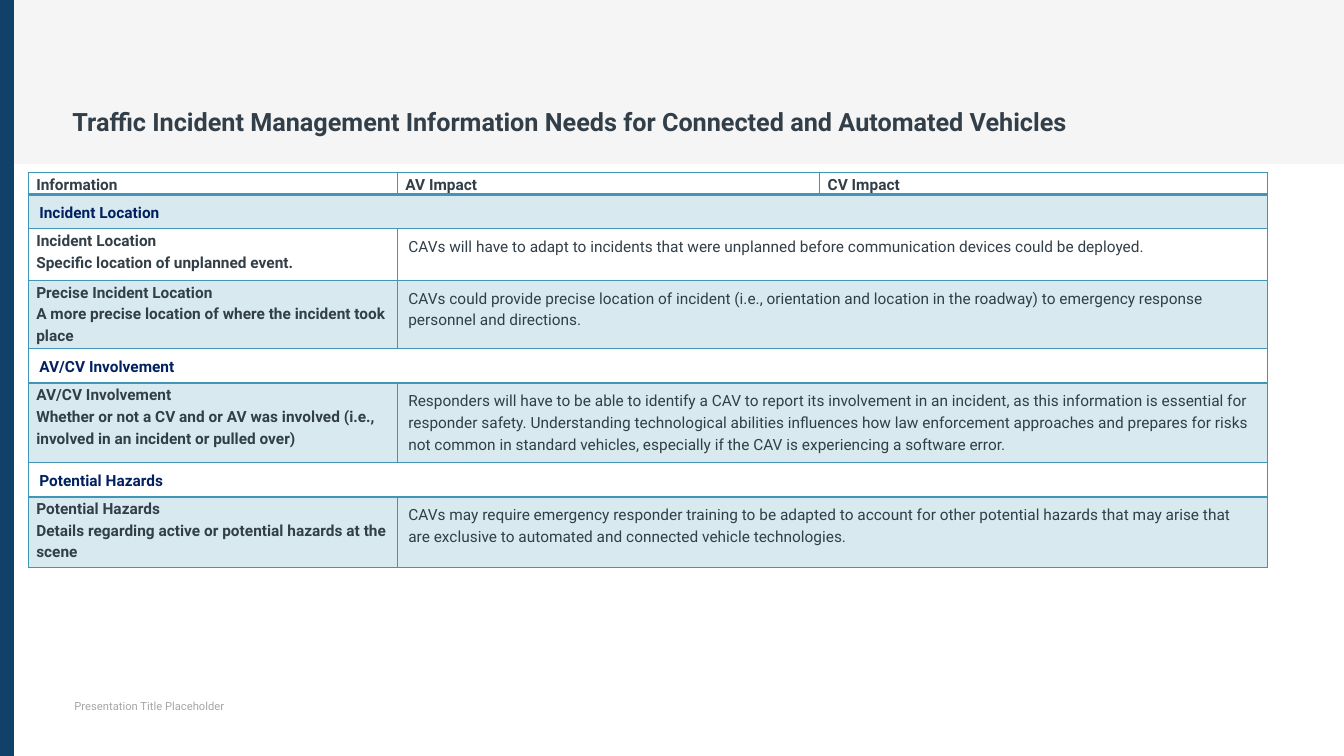
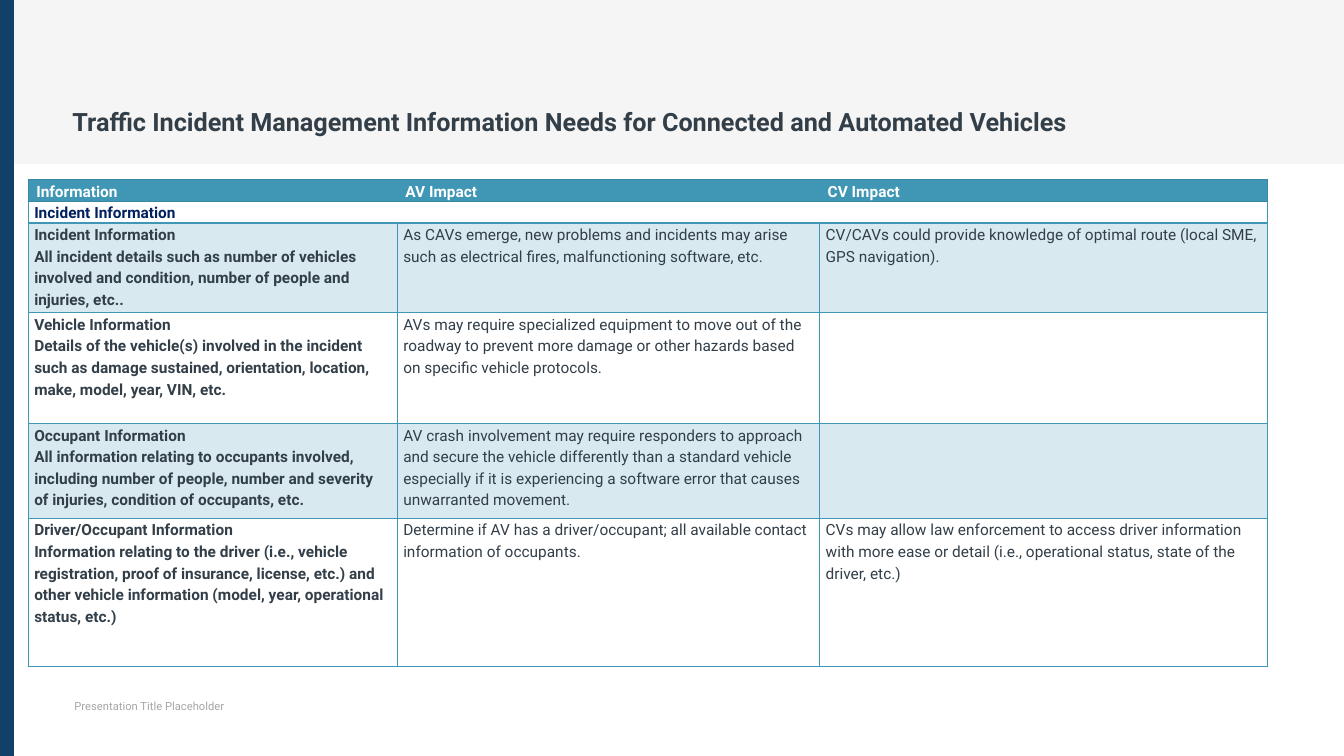
from lxml.etree import SubElement
from pptx import Presentation
from pptx.dml.color import RGBColor
from pptx.enum.shapes import MSO_SHAPE
from pptx.enum.text import MSO_ANCHOR
from pptx.oxml.ns import qn
from pptx.util import Emu, Pt

PX = 9144  # 100 px to the inch
FONT = "Roboto"
COLORS = {
    "band": "F2F2F2", "stripe": "114068", "ink": "323E48", "footer": "A6A6A6",
    "teal": "3F97B5", "edge": "3988A3", "section": "002060", "white": "FFFFFF",
}
TITLE = "Traffic Incident Management Information Needs for Connected and Automated Vehicles"
FOOTER = "Presentation Title Placeholder"
HEADINGS = ["Information", "AV Impact", "CV Impact"]
COLS = [366, 419, 444]
TABLE_LEFT = 28
NARROW, SLIM, WIDE = (6, 0), (8, 0), (11, 6)  # cell insets: sides, top and bottom

# Each row: height, shaded, cell texts; the last text spans the remaining columns.
LOCATION_ROWS = [
    (22, False, HEADINGS),
    (33, True, ["Incident Location"]),
    (51, False, ["Incident Location\nSpecific location of unplanned event.",
                 "CAVs will have to adapt to incidents that were unplanned before "
                 "communication devices could be deployed."]),
    (68, True, ["Precise Incident Location\nA more precise location of where the "
                "incident took place",
                "CAVs could provide precise location of incident (i.e., orientation and "
                "location in the roadway) to emergency response personnel and directions."]),
    (33, False, ["AV/CV Involvement"]),
    (79, True, ["AV/CV Involvement\nWhether or not a CV and or AV was involved (i.e., "
                "involved in an incident or pulled over)",
                "Responders will have to be able to identify a CAV to report its "
                "involvement in an incident, as this information is essential for "
                "responder safety. Understanding technological abilities influences how "
                "law enforcement approaches and prepares for risks not common in standard "
                "vehicles, especially if the CAV is experiencing a software error."]),
    (33, False, ["Potential Hazards"]),
    (70, True, ["Potential Hazards\nDetails regarding active or potential hazards at "
                "the scene",
                "CAVs may require emergency responder training to be adapted to account "
                "for other potential hazards that may arise that are exclusive to "
                "automated and connected vehicle technologies."]),
]
INCIDENT_ROWS = [
    (20, False, ["Incident Information"]),
    (89, True, ["Incident Information\nAll incident details such as number of vehicles "
                "involved and condition, number of people and injuries, etc..",
                "As CAVs emerge, new problems and incidents may arise such as electrical "
                "fires, malfunctioning software, etc.",
                "CV/CAVs could provide knowledge of optimal route (local SME, GPS "
                "navigation)."]),
    (110, False, ["Vehicle Information\nDetails of the vehicle(s) involved in the "
                  "incident such as damage sustained, orientation, location, make, model, "
                  "year, VIN, etc.",
                  "AVs may require specialized equipment to move out of the roadway to "
                  "prevent more damage or other hazards based on specific vehicle "
                  "protocols.",
                  ""]),
    (94, True, ["Occupant Information\nAll information relating to occupants involved, "
                "including number of people, number and severity of injuries, condition "
                "of occupants, etc.",
                "AV crash involvement may require responders to approach and secure the "
                "vehicle differently than a standard vehicle especially if it is "
                "experiencing a software error that causes unwarranted movement.",
                ""]),
    (147, False, ["Driver/Occupant Information\nInformation relating to the driver (i.e., "
                  "vehicle registration, proof of insurance, license, etc.) and other "
                  "vehicle information (model, year, operational status, etc.)",
                  "Determine if AV has a driver/occupant; all available contact "
                  "information of occupants.",
                  "CVs may allow law enforcement to access driver information with more "
                  "ease or detail (i.e., operational status, state of the driver, etc.)"]),
]


def px(*values):
    return [Emu(v * PX) for v in values]


def rgb(name):
    return RGBColor.from_string(COLORS[name])


def set_font(p, size, color, bold=False):
    p.font.name, p.font.size, p.font.bold = FONT, Pt(size), bold
    p.font.color.rgb = rgb(color)


def paint(fill, parent, color, opacity=100):
    """Fill solidly; parent is the XML element that holds the fill."""
    fill.solid()
    fill.fore_color.rgb = rgb(color)
    if opacity < 100:
        clr = parent.find(qn("a:solidFill")).find(qn("a:srgbClr"))
        SubElement(clr, qn("a:alpha"), val=str(opacity * 1000))


def add_bar(s, box, color, opacity=100):
    sp = s.shapes.add_shape(MSO_SHAPE.RECTANGLE, *px(*box))
    sp.shadow.inherit = False
    paint(sp.fill, sp._element.spPr, color, opacity)
    sp.line.fill.background()
    return sp


def add_label(s, box, text, size, color, anchor, bold=False):
    tf = s.shapes.add_textbox(*px(*box)).text_frame
    tf.word_wrap = True
    tf.vertical_anchor = anchor
    tf.text = text
    set_font(tf.paragraphs[0], size, color, bold)


def add_frame(prs):
    """Add a slide with the band, stripe, title and footer."""
    s = prs.slides.add_slide(prs.slide_layouts[6])
    add_label(s, (64, 685, 423, 30), FOOTER, 8, "footer", MSO_ANCHOR.MIDDLE)
    add_bar(s, (0, 0, 1333, 163), "band", 75)
    stripe = add_bar(s, (0, 0, 13, 750), "stripe")
    stripe.line.color.rgb = rgb("stripe")
    stripe.line.width = Pt(1.75)
    add_label(s, (62, 53, 1219, 87), TITLE, 18, "ink", MSO_ANCHOR.BOTTOM, True)
    return s


def set_borders(cell, color, widths):
    """Draw the sides given in widths (points by L, R, T, B) and clear the others."""
    tc_pr = cell._tc.get_or_add_tcPr()
    for side in "LRTB":
        width = widths.get(side, 0)
        ln = SubElement(tc_pr, qn(f"a:ln{side}"), w=str(Pt(width)))
        if width:
            fill = SubElement(ln, qn("a:solidFill"))
            SubElement(fill, qn("a:srgbClr"), val=COLORS[color])
        else:
            SubElement(ln, qn("a:noFill"))


def set_text(cell, text, inset, color, bold):
    side, end = px(*inset)
    cell.margin_left = cell.margin_right = side
    cell.margin_top = cell.margin_bottom = end
    cell.text_frame.text = text
    for p in cell.text_frame.paragraphs:
        p.line_spacing = 1.2
        set_font(p, 11, color, bold)


def new_table(s, top, heights):
    box = px(TABLE_LEFT, top, sum(COLS), sum(heights))
    table = s.shapes.add_table(len(heights), len(COLS), *box).table
    table.first_row = table.horz_banding = False
    for column, width in zip(table.columns, px(*COLS)):
        column.width = width
    for row, height in zip(table.rows, px(*heights)):
        row.height = height
    return table


def add_needs_table(s, top, rows, label_inset, text_inset):
    table = new_table(s, top, [height for height, _, _ in rows])
    last = len(COLS) - 1
    for r, (_, shaded, texts) in enumerate(rows):
        end = len(texts) - 1
        if end < last:
            table.cell(r, end).merge(table.cell(r, last))
        section = end == 0
        heading = texts is HEADINGS
        for c in range(len(COLS)):
            cell = table.cell(r, c)
            widths = {"T": 2 if r == 1 else 1, "B": 2 if r == 0 else 1}
            if not cell.is_spanned:
                widths["L"] = 1
            if c >= end:
                widths["R"] = 1
            set_borders(cell, "teal", widths)
            if shaded:
                paint(cell.fill, cell._tc.tcPr, "teal", 20)
            else:
                cell.fill.background()
            if c <= end:
                is_label = heading or (c == 0 and not section)
                set_text(cell, texts[c], label_inset if is_label else text_inset,
                         "section" if section else "ink", heading or c == 0)


def add_heading_bar(s, top):
    table = new_table(s, top, [20])
    for c, text in enumerate(HEADINGS):
        cell = table.cell(0, c)
        outer = {0: {"L": 1}, len(COLS) - 1: {"R": 1}}.get(c, {})
        set_borders(cell, "edge", {"T": 1, "B": 1, **outer})
        paint(cell.fill, cell._tc.tcPr, "teal")
        set_text(cell, text, SLIM, "white", True)


def main():
    prs = Presentation()
    prs.slide_width, prs.slide_height = px(1333, 750)
    add_needs_table(add_frame(prs), 171, LOCATION_ROWS, SLIM, WIDE)
    s = add_frame(prs)
    add_needs_table(s, 199, INCIDENT_ROWS, NARROW, NARROW)
    add_heading_bar(s, 178)
    prs.save("out.pptx")


if __name__ == "__main__":
    main()
